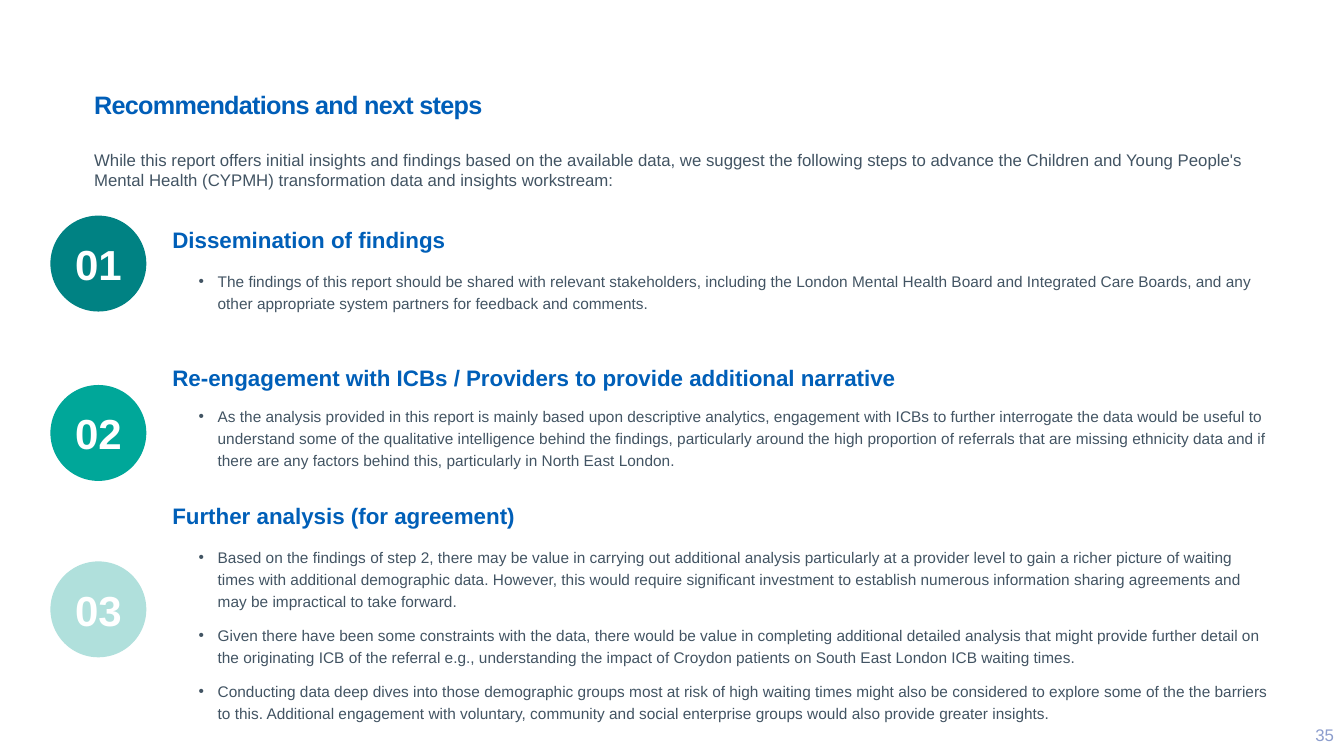
"""Build the slide of recommendations and next steps."""
from lxml import etree
from pptx import Presentation
from pptx.dml.color import RGBColor
from pptx.enum.shapes import MSO_SHAPE
from pptx.enum.text import MSO_ANCHOR, MSO_AUTO_SIZE, PP_ALIGN
from pptx.oxml.ns import qn
from pptx.util import Pt

OVAL = MSO_SHAPE.OVAL
TOP, MIDDLE, BOTTOM = MSO_ANCHOR.TOP, MSO_ANCHOR.MIDDLE, MSO_ANCHOR.BOTTOM
LEFT, CENTER, RIGHT = PP_ALIGN.LEFT, PP_ALIGN.CENTER, PP_ALIGN.RIGHT
NO_AUTOFIT = MSO_AUTO_SIZE.NONE

TITLE_BLUE = RGBColor(0x00, 0x5E, 0xB8)
HEADING_BLUE = RGBColor(0x00, 0x5F, 0xB8)
SLATE = RGBColor(0x42, 0x54, 0x63)
LAVENDER = RGBColor(0x8C, 0x9D, 0xCD)
WHITE = RGBColor(0xFF, 0xFF, 0xFF)
DARK_TEAL = RGBColor(0x00, 0x82, 0x83)
TEAL = RGBColor(0x00, 0xA7, 0x99)
PALE_TEAL = RGBColor(0xB0, 0xE0, 0xDC)

CIRCLE_SIZE = 68.5
HEADING_TOP, HEADING_STEP = 157.6, 98.65

STEPS = [
    {
        "heading": "Dissemination of findings", "heading_width": 216.7,
        "circle_top": 154, "color": DARK_TEAL, "list_top": 189.4, "list_height": 52.6,
        "points": [
            "The findings of this report should be shared with relevant stakeholders, including the London "
            "Mental Health Board and Integrated Care Boards, and any other appropriate system partners for "
            "feedback and comments.",
        ],
    },
    {
        "heading": "Re-engagement with ICBs / Providers to provide additional narrative", "heading_width": 533.5,
        "circle_top": 275, "color": TEAL, "list_top": 285.8, "list_height": 69.1,
        "points": [
            "As the analysis provided in this report is mainly based upon descriptive analytics, engagement "
            "with ICBs to further interrogate the data would be useful to understand some of the qualitative "
            "intelligence behind the findings, particularly around the high proportion of referrals that are "
            "missing ethnicity data and if there are any factors behind this, particularly in North East London.",
        ],
    },
    {
        "heading": "Further analysis (for agreement)", "heading_width": 262.8,
        "circle_top": 401, "color": PALE_TEAL, "list_top": 386.6, "list_height": 131.8,
        "points": [
            "Based on the findings of step 2, there may be value in carrying out additional analysis "
            "particularly at a provider level to gain a richer picture of waiting times with additional "
            "demographic data. However, this would require significant investment to establish numerous "
            "information sharing agreements and may be impractical to take forward.",
            "Given there have been some constraints with the data, there would be value in completing "
            "additional detailed analysis that might provide further detail on the originating ICB of the "
            "referral e.g., understanding the impact of Croydon patients on South East London ICB waiting times.",
            "Conducting data deep dives into those demographic groups most at risk of high waiting times might "
            "also be considered to explore some of the the barriers to this. Additional engagement with "
            "voluntary, community and social enterprise groups would also provide greater insights.",
        ],
    },
]


def write(shape, *texts, size, color, bold=False, align=LEFT, anchor=TOP, wrap=True,
          inset=(7.2, 3.6), bullet=False, tracking=0):
    frame = shape.text_frame
    frame.auto_size = NO_AUTOFIT
    frame.word_wrap = wrap
    frame.vertical_anchor = anchor
    frame.margin_left = frame.margin_right = Pt(inset[0])
    frame.margin_top = frame.margin_bottom = Pt(inset[1])
    for index, text in enumerate(texts):
        paragraph = frame.add_paragraph() if index else frame.paragraphs[0]
        paragraph.alignment = align
        paragraph.space_before = Pt(2.2 if index else 0)
        if bullet:
            paragraph.line_spacing = 1.2
            paragraph.space_after = Pt(6)
            properties = paragraph._p.get_or_add_pPr()
            properties.set("marL", str(Pt(13.7)))
            properties.set("indent", str(Pt(-13.7)))
            etree.SubElement(properties, qn("a:buFont"), typeface="Arial")
            etree.SubElement(properties, qn("a:buChar"), char="•")
        run = paragraph.add_run()
        run.text = text
        run.font.name = "Arial"
        run.font.size = Pt(size)
        run.font.bold = bold
        run.font.color.rgb = color
        if tracking:
            run._r.get_or_add_rPr().set("spc", str(round(tracking * 100)))


def place(shape, left, top, width, height):
    shape.left, shape.top, shape.width, shape.height = Pt(left), Pt(top), Pt(width), Pt(height)
    return shape


presentation = Presentation()
presentation.slide_width, presentation.slide_height = Pt(960), Pt(540)
comparison_layout = presentation.slide_layouts.get_by_name("Comparison")
slide = presentation.slides.add_slide(comparison_layout)
title, intro, *lists = slide.placeholders

write(place(title, 60, 60.5, 470, 57.6), "Recommendations and next steps",
      size=18, color=TITLE_BLUE, bold=True, tracking=-0.5)
write(place(intro, 60, 103, 847.4, 36),
      "While this report offers initial insights and findings based on the available data, we suggest the "
      "following steps to advance the Children and Young People's Mental Health (CYPMH) transformation data "
      "and insights workstream:", size=12, color=SLATE)

for index, (step, points_box) in enumerate(zip(STEPS, lists)):
    circle = slide.shapes.add_shape(OVAL, Pt(36), Pt(step["circle_top"]), Pt(CIRCLE_SIZE), Pt(CIRCLE_SIZE))
    circle.shadow.inherit = False
    circle.fill.solid()
    circle.fill.fore_color.rgb = step["color"]
    circle.line.fill.background()
    write(circle, f"{index + 1:02}", size=30, color=WHITE, bold=True,
          align=CENTER, anchor=MIDDLE, wrap=False, inset=(0, 0))

    heading = slide.shapes.add_textbox(Pt(116), Pt(HEADING_TOP + index * HEADING_STEP),
                                       Pt(step["heading_width"]), Pt(26.6))
    write(heading, step["heading"], size=16, color=HEADING_BLUE, bold=True, anchor=BOTTOM, wrap=False)

    place(points_box, 138.2, step["list_top"], 775.4, step["list_height"])
    write(points_box, *step["points"], size=11, color=SLATE, inset=(3.6, 2.2), bullet=True)

page_number = slide.shapes.add_textbox(Pt(890), Pt(510.5), Pt(70), Pt(28.8))
write(page_number, "35", size=12, color=LAVENDER, align=RIGHT, anchor=MIDDLE)

presentation.save("out.pptx")
